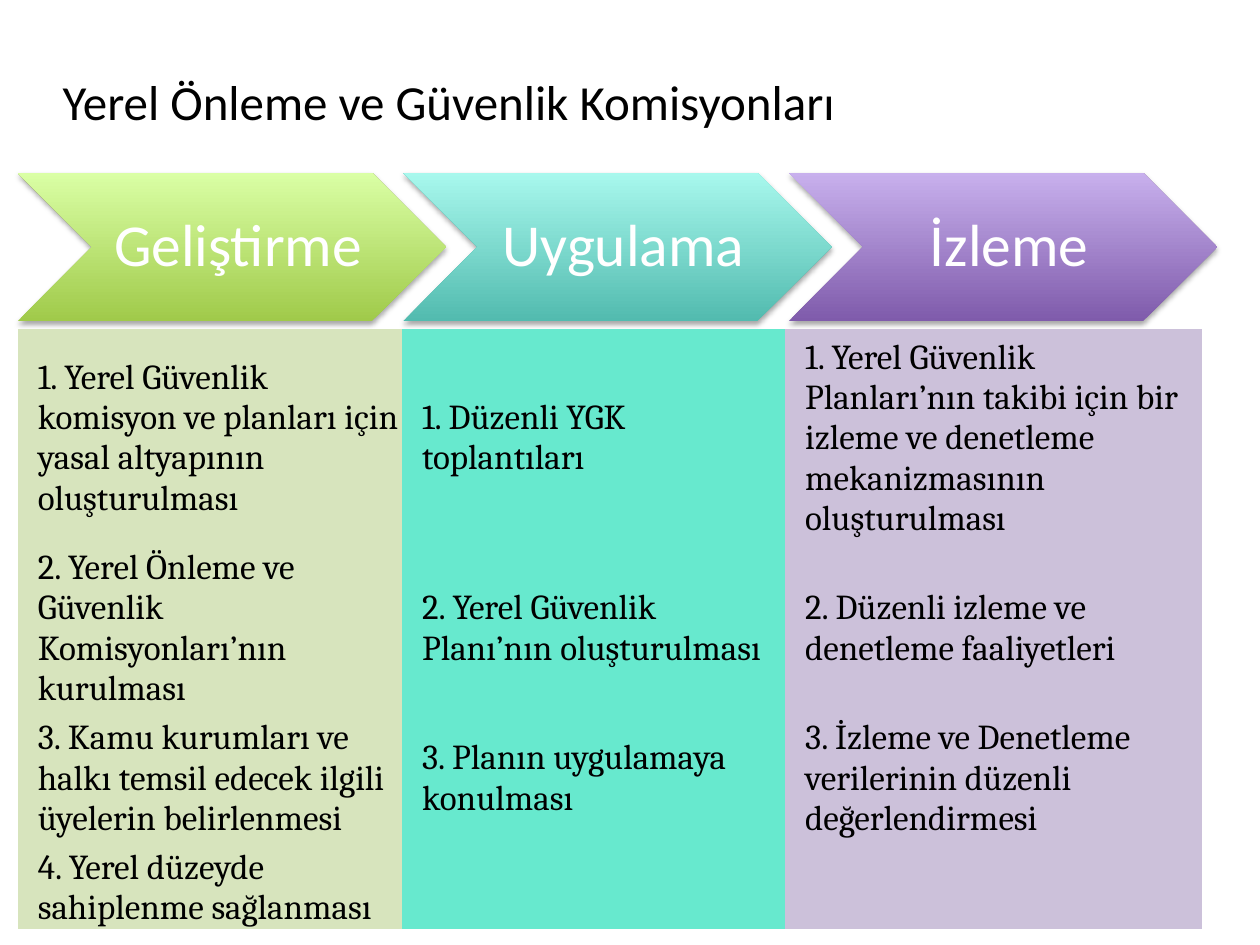
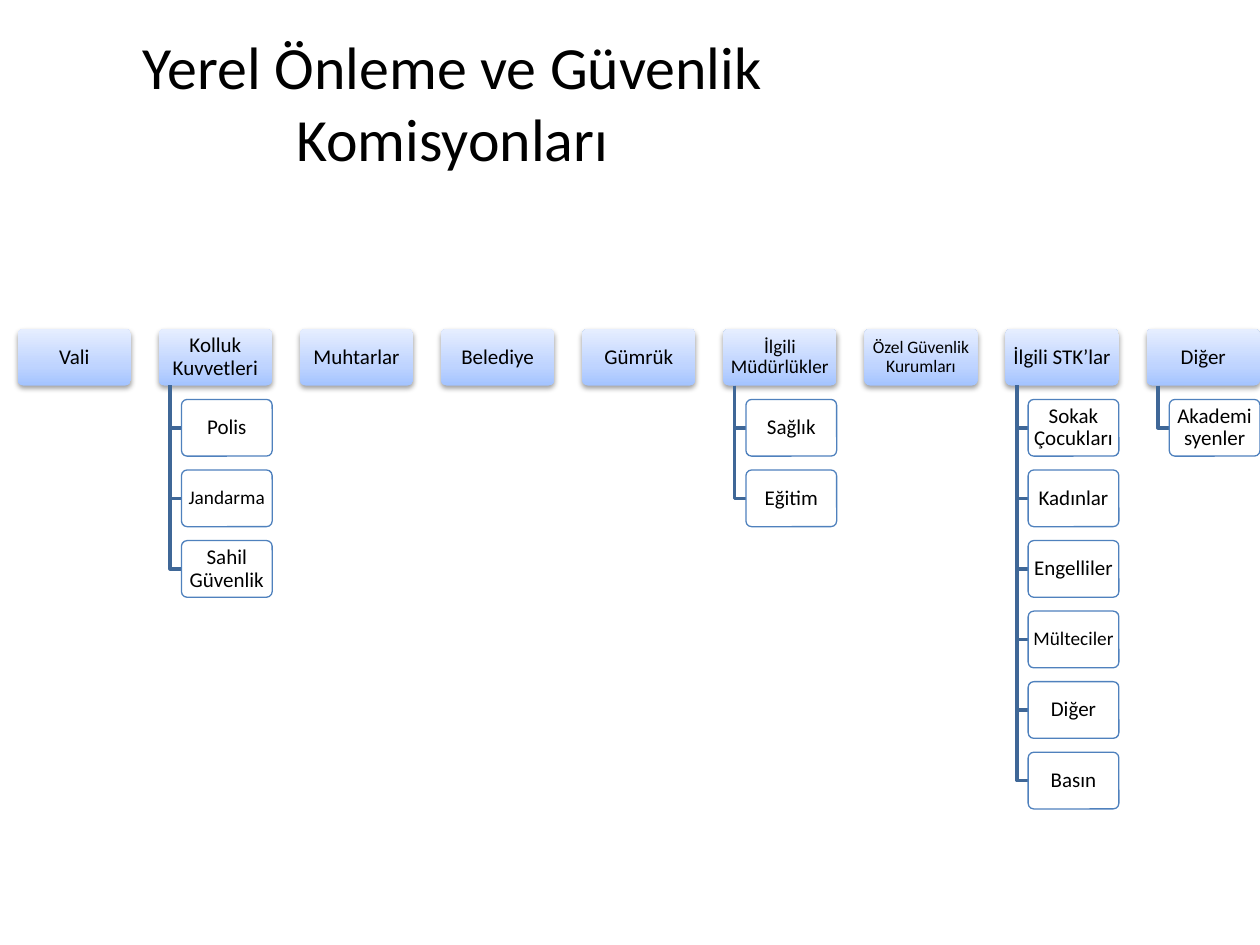
from lxml import etree
from pptx import Presentation
from pptx.dml.color import RGBColor
from pptx.enum.shapes import MSO_SHAPE
from pptx.enum.text import MSO_ANCHOR, MSO_AUTO_SIZE, PP_ALIGN
from pptx.oxml.ns import qn
from pptx.util import Inches, Pt

CENTER, LEFT = PP_ALIGN.CENTER, PP_ALIGN.LEFT
MIDDLE = MSO_ANCHOR.MIDDLE
NO_AUTOFIT = MSO_AUTO_SIZE.NONE
CHEVRON, ROUNDED = MSO_SHAPE.CHEVRON, MSO_SHAPE.ROUNDED_RECTANGLE

COLORS = {
    "text": "000000",
    "phase_text": "FFFFFF",
    "member_fill": "FFFFFF",
    "member_line": "4F81BD",
    "branch": "3F6797",
    "shadow": "000000",
}
GROUP_GRADIENT = [(0, "A4C4FF"), (35, "BFD4FF"), (100, "E6EEFF")]
BODY_FONT, TABLE_FONT = "Calibri", "Cambria"
PLAIN_TABLE_STYLE = "{2D5ABB26-0587-4C30-8999-92F81FD0307C}"
TITLE = "Yerel Önleme ve Güvenlik Komisyonları"

PHASES = [
    {
        "name": "Geliştirme",
        "gradient": [(0, "A0CA4A"), (100, "DAFFA5")],
        "column": (3.05, "D7E4BD"),
        "steps": [
            "1. Yerel Güvenlik komisyon ve planları için yasal altyapının oluşturulması",
            "2. Yerel Önleme ve Güvenlik Komisyonları’nın kurulması",
            "3. Kamu kurumları ve halkı temsil edecek ilgili üyelerin belirlenmesi",
            "4. Yerel düzeyde sahiplenme sağlanması",
        ],
    },
    {
        "name": "Uygulama",
        "gradient": [(0, "52BBAF"), (100, "A8F8ED")],
        "column": (3.04, "67E9CE"),
        "steps": [
            "1. Düzenli YGK toplantıları",
            "2. Yerel Güvenlik Planı’nın oluşturulması",
            "3. Planın uygulamaya konulması",
        ],
    },
    {
        "name": "İzleme",
        "gradient": [(0, "7F5BAB"), (100, "C8B0ED")],
        "column": (3.31, "CCC1DA"),
        "steps": [
            "1. Yerel Güvenlik Planları’nın takibi için bir izleme ve denetleme "
            "mekanizmasının oluşturulması",
            "2. Düzenli izleme ve denetleme faaliyetleri",
            "3. İzleme ve Denetleme verilerinin düzenli değerlendirmesi",
        ],
    },
]
STEP_ROW_HEIGHTS = [1.31, 1.31, 0.6, 0.66]

COMMISSION = [
    ("Vali", []),
    ("Kolluk Kuvvetleri", ["Polis", "Jandarma", "Sahil Güvenlik"]),
    ("Muhtarlar", []),
    ("Belediye", []),
    ("Gümrük", []),
    ("İlgili Müdürlükler", ["Sağlık", "Eğitim"]),
    ("Özel Güvenlik Kurumları", []),
    ("İlgili STK’lar",
     ["Sokak Çocukları", "Kadınlar", "Engelliler", "Mülteciler", "Diğer", "Basın"]),
    ("Diğer", ["Akademisyenler"]),
]
SMALLER_LABELS = {"Jandarma": 11, "İlgili Müdürlükler": 11, "Mülteciler": 11,
                  "Özel Güvenlik Kurumları": 10}


def rgb(hex_color):
    return RGBColor.from_string(hex_color)


def write_text(frame, text, size, font=BODY_FONT, color=COLORS["text"],
               align=CENTER, spacing=None, margins=None):
    """Fill a text frame with one paragraph; margins are left, top, right, bottom."""
    frame.word_wrap = True
    frame.auto_size = NO_AUTOFIT
    frame.vertical_anchor = MIDDLE
    if margins:
        (frame.margin_left, frame.margin_top,
         frame.margin_right, frame.margin_bottom) = map(Inches, margins)
    paragraph = frame.paragraphs[0]
    paragraph.alignment = align
    if spacing:
        paragraph.line_spacing = spacing
    run = paragraph.add_run()
    run.text = text
    run.font.size = Pt(size)
    run.font.name = font
    run.font.color.rgb = rgb(color)


def fill_upward_gradient(shape, stops):
    shape.fill.gradient()
    shape.fill.gradient_angle = 90
    stop_list = shape.element.spPr.find(".//" + qn("a:gsLst"))
    for default_stop in list(stop_list):
        stop_list.remove(default_stop)
    for position, color in stops:
        stop = etree.SubElement(stop_list, qn("a:gs"), pos=str(position * 1000))
        etree.SubElement(stop, qn("a:srgbClr"), val=color)


def cast_shadow(shape, opacity, distance):
    shape.shadow.inherit = False
    effects = shape.element.spPr.find(qn("a:effectLst"))
    shadow = etree.SubElement(
        effects, qn("a:outerShdw"), blurRad=str(Pt(3.15)), dist=str(Pt(distance)),
        dir="5400000", rotWithShape="0")
    color = etree.SubElement(shadow, qn("a:srgbClr"), val=COLORS["shadow"])
    etree.SubElement(color, qn("a:alpha"), val=str(opacity * 1000))


def add_titled_slide(prs, box, size):
    slide = prs.slides.add_slide(prs.slide_layouts[5])
    title = slide.shapes.title
    title.left, title.top, title.width, title.height = map(Inches, box)
    write_text(title.text_frame, TITLE, size)
    return slide


def add_phase_arrows(slide, left, top, width, height, pitch):
    for index, phase in enumerate(PHASES):
        arrow = slide.shapes.add_shape(
            CHEVRON, Inches(left + index * pitch), Inches(top),
            Inches(width), Inches(height))
        fill_upward_gradient(arrow, phase["gradient"])
        arrow.line.fill.background()
        cast_shadow(arrow, 35, 1.8)
        write_text(arrow.text_frame, phase["name"], 34, color=COLORS["phase_text"],
                   spacing=0.9, margins=(0.15, 0.05, 0.05, 0.05))


def add_steps_table(slide, left, top, width, height):
    frame = slide.shapes.add_table(
        len(STEP_ROW_HEIGHTS), len(PHASES),
        Inches(left), Inches(top), Inches(width), Inches(height))
    table = frame.table
    table.first_row = table.horz_banding = False
    frame.element.find(".//" + qn("a:tableStyleId")).text = PLAIN_TABLE_STYLE
    for row, row_height in zip(table.rows, STEP_ROW_HEIGHTS):
        row.height = Inches(row_height)
    for column, phase in enumerate(PHASES):
        column_width, color = phase["column"]
        table.columns[column].width = Inches(column_width)
        for row in range(len(STEP_ROW_HEIGHTS)):
            cell = table.cell(row, column)
            cell.fill.solid()
            cell.fill.fore_color.rgb = rgb(color)
            cell.vertical_anchor = MIDDLE
            (cell.margin_left, cell.margin_top,
             cell.margin_right, cell.margin_bottom) = map(Inches, (0.16, 0.07, 0.01, 0))
            if row < len(phase["steps"]):
                write_step(cell, phase["steps"][row])
    frame.height = Inches(height)


def write_step(cell, step):
    paragraph = cell.text_frame.paragraphs[0]
    paragraph.alignment = LEFT
    run = paragraph.add_run()
    run.text = step
    run.font.size = Pt(20)
    run.font.name = TABLE_FONT
    run.font.color.rgb = rgb(COLORS["text"])


def add_commission_box(slide, label, left, top, width, height):
    box = slide.shapes.add_shape(
        ROUNDED, Inches(left), Inches(top), Inches(width), Inches(height))
    box.adjustments[0] = 0.1
    box.shadow.inherit = False
    write_text(box.text_frame, label, SMALLER_LABELS.get(label, 12), spacing=0.9,
               margins=(0.03, 0.02, 0.03, 0.02) if label not in SMALLER_LABELS
               else (0.02, 0.02, 0.02, 0.02))
    return box


def add_group_box(slide, label, *box):
    group = add_commission_box(slide, label, *box)
    fill_upward_gradient(group, GROUP_GRADIENT)
    group.line.fill.background()
    cast_shadow(group, 38, 1.6)


def add_member_box(slide, label, *box):
    member = add_commission_box(slide, label, *box)
    member.fill.solid()
    member.fill.fore_color.rgb = rgb(COLORS["member_fill"])
    fill_color = member.element.spPr.find(qn("a:solidFill")).find(qn("a:srgbClr"))
    etree.SubElement(fill_color, qn("a:alpha"), val="90000")
    member.line.color.rgb = rgb(COLORS["member_line"])
    member.line.width = Pt(0.75)


def add_branch(slide, trunk_x, start_y, end_x, end_y):
    """Draw the elbow that runs down from a group and right to a member."""
    builder = slide.shapes.build_freeform(Inches(trunk_x), Inches(start_y))
    builder.add_line_segments(
        [(Inches(trunk_x), Inches(end_y)), (Inches(end_x), Inches(end_y))], close=False)
    branch = builder.convert_to_shape()
    branch.fill.background()
    branch.line.color.rgb = rgb(COLORS["branch"])
    branch.line.width = Pt(2)
    branch.shadow.inherit = False


def add_commission_chart(slide, left, top, group_width, height):
    column_pitch, row_pitch = 1.12, 0.56
    indent = 0.2 * group_width
    for column, (group, members) in enumerate(COMMISSION):
        group_left = left + column * column_pitch
        member_left = group_left + indent
        add_group_box(slide, group, group_left, top, group_width, height)
        for row, member in enumerate(members, start=1):
            member_top = top + row * row_pitch
            add_branch(slide, group_left + indent / 2, top + height,
                       member_left, member_top + height / 2)
            add_member_box(slide, member, member_left, member_top,
                           group_width - indent, height)


def main():
    prs = Presentation()
    prs.slide_width, prs.slide_height = Inches(10), Inches(7.5)

    phases_slide = add_titled_slide(prs, (0.14, 0.18, 6.84, 1.25), 28)
    add_phase_arrows(phases_slide, 0.14, 1.37, 3.4, 1.18, pitch=3.06)
    add_steps_table(phases_slide, 0.14, 2.61, 9.4, 4.93)

    members_slide = add_titled_slide(prs, (0.34, 0.18, 6.5, 1.25), 34.2)
    add_commission_chart(members_slide, 0.14, 2.61, 0.9, 0.45)

    prs.save("out.pptx")


if __name__ == "__main__":
    main()
